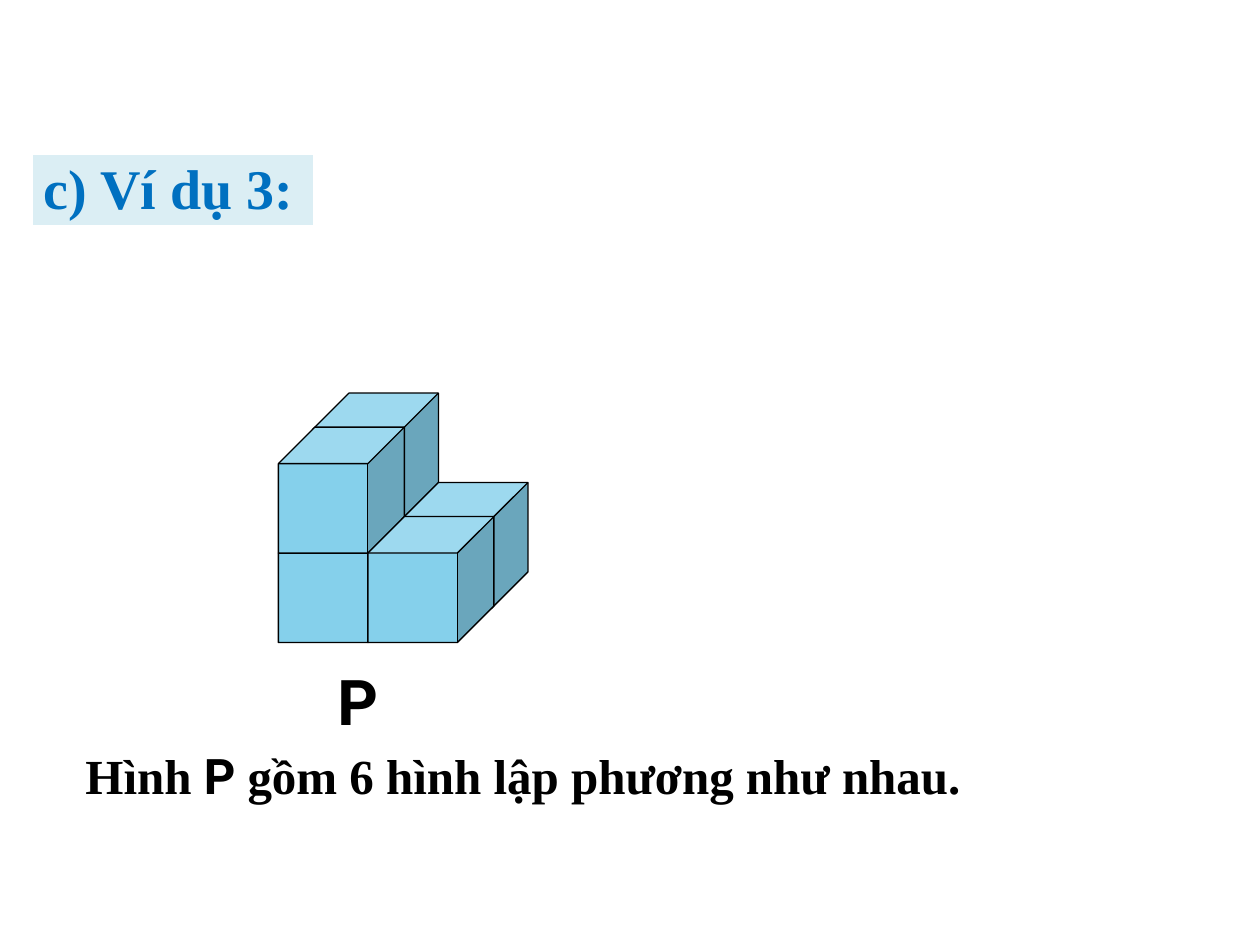
"""Build a slide showing a solid made of six equal cubes."""
import dataclasses

import pptx
import pptx.dml.color
import pptx.enum.shapes
import pptx.enum.text
import pptx.util

SHAPE = pptx.enum.shapes.MSO_SHAPE
PX = 9144


@dataclasses.dataclass(frozen=True)
class Theme:
    cube: str = "85D0EB"
    band: str = "DBEEF4"
    heading: str = "0070C0"
    ink: str = "000000"
    paper: str = "FFFFFF"
    serif: str = "Times New Roman"
    sans: str = "Roboto"
    label_size: int = 36
    heading_size: int = 32
    body_size: int = 28


class Deck:
    def __init__(self, prs, theme):
        self.theme = theme
        self.s = prs.slides.add_slide(prs.slide_layouts[6])

    def color(self, value):
        return pptx.dml.color.RGBColor.from_string(value)

    def shape(self, kind, box, fill, line, width):
        sp = self.s.shapes.add_shape(kind, *(v * PX for v in box))
        sp.shadow.inherit = False
        sp.fill.solid()
        sp.fill.fore_color.rgb = self.color(fill)
        sp.line.color.rgb = self.color(line)
        sp.line.width = pptx.util.Pt(width)
        return sp

    def cube(self, left, top, size, depth):
        sp = self.shape(SHAPE.CUBE, (left, top, size, size), self.theme.cube, self.theme.ink, 0.75)
        sp.adjustments[0] = depth

    def band(self, box):
        self.shape(SHAPE.RECTANGLE, box, self.theme.band, self.theme.paper, 2)

    def text(self, box, runs, size, color):
        sp = self.s.shapes.add_textbox(*(v * PX for v in box))
        tf = sp.text_frame
        tf.word_wrap = True
        tf.auto_size = pptx.enum.text.MSO_AUTO_SIZE.SHAPE_TO_FIT_TEXT
        p = tf.paragraphs[0]
        for content, font in runs:
            r = p.add_run()
            r.text = content
            r.font.name = font
            r.font.size = pptx.util.Pt(size)
            r.font.bold = True
            r.font.color.rgb = self.color(color)


def main():
    prs = pptx.Presentation()
    prs.slide_width, prs.slide_height = 1000 * PX, 750 * PX
    theme = Theme()
    deck = Deck(prs, theme)

    left, top, size, face, shift = 221, 410, 100, 71, 27
    for column, levels in enumerate((2, 1)):
        for level in range(levels):
            for row in (1, 0):
                deck.cube(left + column * face + row * shift,
                          top - level * face - row * shift, size, 0.29)

    deck.text((258, 521, 58, 71), [("P", theme.sans)], theme.label_size, theme.ink)
    deck.band((25, 122, 225, 58))
    deck.text((25, 117, 244, 64), [("c) Ví dụ 3:", theme.serif)],
              theme.heading_size, theme.heading)
    deck.text((58, 587, 775, 57),
              [("Hình ", theme.serif), ("P ", theme.sans),
               ("gồm 6 hình lập phương như nhau.", theme.serif)],
              theme.body_size, theme.ink)
    prs.save("out.pptx")


if __name__ == "__main__":
    main()
